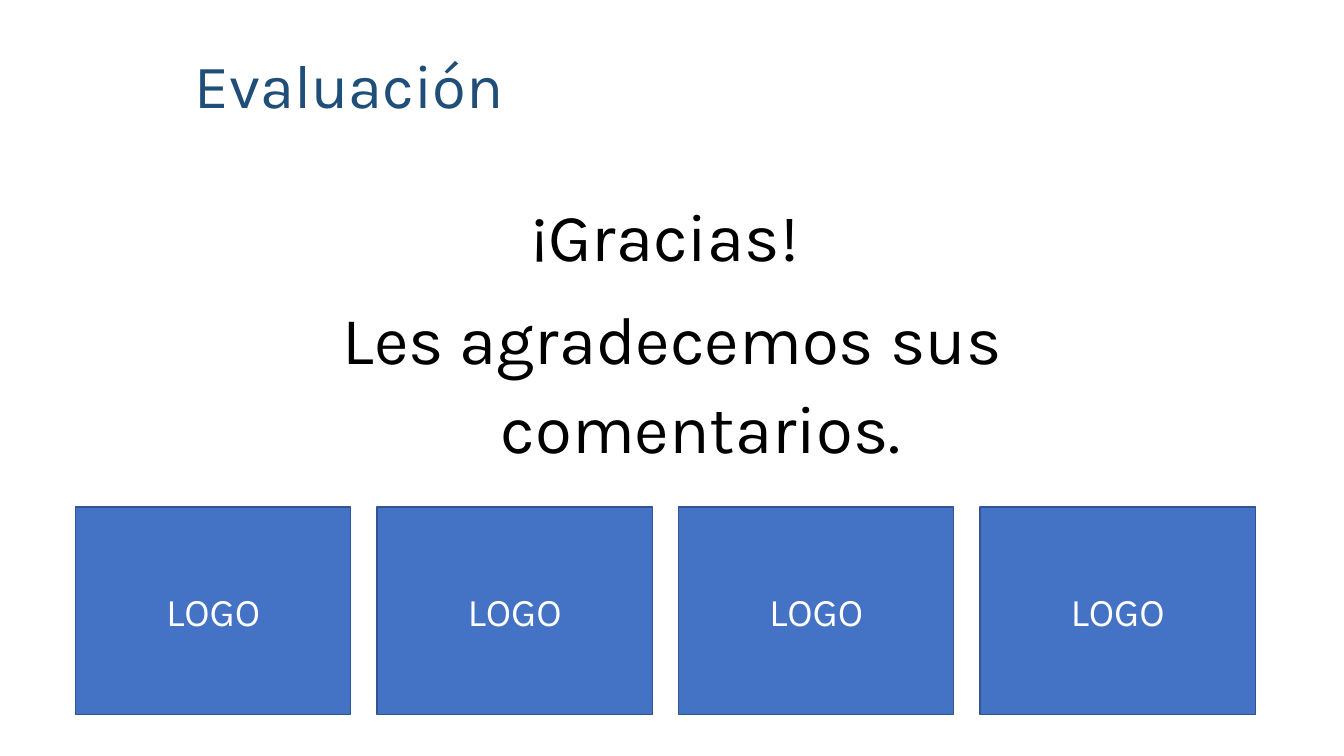
from dataclasses import dataclass

from pptx import Presentation
from pptx.dml.color import RGBColor
from pptx.enum.shapes import MSO_SHAPE as Shape
from pptx.enum.text import MSO_ANCHOR as Anchor, PP_ALIGN as Align
from pptx.util import Emu, Pt

EMU_PER_PX = 9144  # 100 px to the inch


@dataclass(frozen=True)
class Theme:
    font: str = "Karla"
    heading: str = "1F4E79"
    body: str = "000000"
    tile: str = "4472C4"
    tile_edge: str = "325491"
    tile_label: str = "FFFFFF"
    heading_size: int = 44
    body_size: int = 48
    label_size: int = 28


def px(length):
    return Emu(length * EMU_PER_PX)


class SlideBuilder:
    def __init__(self, slide, theme):
        self.slide = slide
        self.theme = theme

    def add_text(self, paragraph, text, size, color, align):
        paragraph.alignment = align
        run = paragraph.add_run()
        run.text = text
        run.font.name = self.theme.font
        run.font.size = Pt(size)
        run.font.color.rgb = RGBColor.from_string(color)

    def title(self, text, left, top, width, height):
        heading = self.slide.shapes.title
        heading.left, heading.top = px(left), px(top)
        heading.width, heading.height = px(width), px(height)
        frame = heading.text_frame
        frame.word_wrap = True
        frame.vertical_anchor = Anchor.MIDDLE
        line = frame.paragraphs[0]
        line.line_spacing = 0.9
        self.add_text(line, text, self.theme.heading_size, self.theme.heading, Align.LEFT)

    def message(self, lines, left, top, width, height, hanging):
        """Centred paragraphs with a hanging indent."""
        box = self.slide.shapes.add_textbox(px(left), px(top), px(width), px(height))
        frame = box.text_frame
        frame.word_wrap = True
        for index, text in enumerate(lines):
            line = frame.add_paragraph() if index else frame.paragraphs[0]
            line.line_spacing = 1.1
            line.space_before = Pt(10 if index else 0)
            properties = line._p.get_or_add_pPr()
            properties.set("marL", str(px(hanging)))
            properties.set("indent", str(-px(hanging)))
            self.add_text(line, text, self.theme.body_size, self.theme.body, Align.CENTER)

    def tile(self, label, left, top, width, height):
        tile = self.slide.shapes.add_shape(
            Shape.RECTANGLE, px(left), px(top), px(width), px(height))
        tile.shadow.inherit = False
        tile.fill.solid()
        tile.fill.fore_color.rgb = RGBColor.from_string(self.theme.tile)
        tile.line.color.rgb = RGBColor.from_string(self.theme.tile_edge)
        tile.line.width = Pt(1)
        frame = tile.text_frame
        frame.vertical_anchor = Anchor.MIDDLE
        self.add_text(frame.paragraphs[0], label, self.theme.label_size,
                      self.theme.tile_label, Align.CENTER)


def main():
    deck = Presentation()
    deck.slide_width, deck.slide_height = px(1333), px(750)
    title_only = deck.slide_layouts[5]
    builder = SlideBuilder(deck.slides.add_slide(title_only), Theme())

    builder.title("Evaluación", 183, 15, 1058, 145)
    builder.message(["¡Gracias! ", "Les agradecemos sus comentarios."],
                    138, 180, 1058, 193, hanging=56)
    first_left, pitch = 75, 299
    for column in range(4):
        builder.tile("LOGO", first_left + column * pitch, 503, 273, 206)

    deck.save("out.pptx")


if __name__ == "__main__":
    main()
